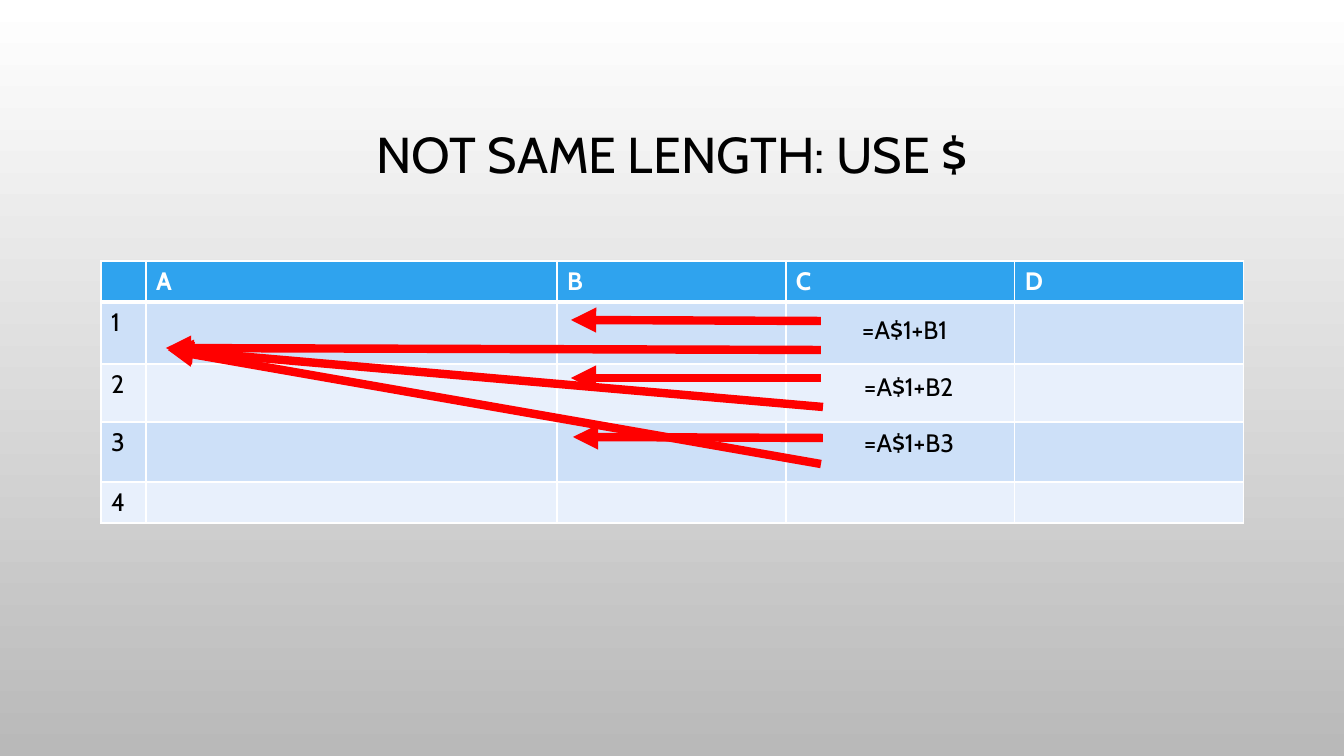
from lxml import etree
from pptx import Presentation
from pptx.dml.color import RGBColor
from pptx.enum.shapes import MSO_CONNECTOR
from pptx.enum.text import MSO_ANCHOR, PP_ALIGN
from pptx.oxml.ns import qn
from pptx.util import Pt

PX = 914400 / 100.8
STRAIGHT = MSO_CONNECTOR.STRAIGHT
MIDDLE, TOP = MSO_ANCHOR.MIDDLE, MSO_ANCHOR.TOP
CENTER, LEFT = PP_ALIGN.CENTER, PP_ALIGN.LEFT
BLACK, WHITE, RED = "000000", "FFFFFF", "FF0000"
HEADER, BAND_DARK, BAND_LIGHT = "2FA3EE", "CDE0F8", "E8F0FC"


def px(*lengths):
    return [round(length * PX) for length in lengths]


def write(frame, text, size=18, color=BLACK, bold=False, align=LEFT, anchor=TOP,
          wrap=True, spacing=None):
    frame.word_wrap = wrap
    frame.vertical_anchor = anchor
    paragraph = frame.paragraphs[0]
    paragraph.alignment = align
    paragraph.line_spacing = spacing
    run = paragraph.add_run()
    run.text = text
    run.font.name = "Cabin"
    run.font.size = Pt(size)
    run.font.bold = bold
    run.font.color.rgb = RGBColor.from_string(color)


presentation = Presentation()
presentation.slide_width, presentation.slide_height = px(1344, 756)
slide = presentation.slides.add_slide(presentation.slide_layouts[6])

# Background: white at the top to grey at the bottom
background = slide.background.fill
background.gradient()
background.gradient_angle = 270
for stop, color in zip(background.gradient_stops, (WHITE, "B9B9B9")):
    stop.color.rgb = RGBColor.from_string(color)

# Title
title = slide.shapes.add_textbox(*px(101, 69, 1142, 176))
write(title.text_frame, "NOT SAME LENGTH: USE $", size=36, align=CENTER,
      anchor=MIDDLE, spacing=0.9)

# Spreadsheet grid
column_widths = [45, 411, 229, 229, 229]
row_heights = [41, 62, 58, 60, 41]
table = slide.shapes.add_table(
    len(row_heights), len(column_widths),
    *px(101, 261, sum(column_widths), sum(row_heights))).table
for column, width in zip(table.columns, px(*column_widths)):
    column.width = width
for row, height in zip(table.rows, px(*row_heights)):
    row.height = height

for row_index in range(len(row_heights)):
    is_header = row_index == 0
    fill = HEADER if is_header else BAND_DARK if row_index % 2 else BAND_LIGHT
    for column_index, letter in enumerate(["", "A", "B", "C", "D"]):
        cell = table.cell(row_index, column_index)
        properties = cell._tc.get_or_add_tcPr()
        for side in "LRTB":
            thick = (is_header and side == "B") or (row_index == 1 and side == "T")
            border = etree.SubElement(properties, qn(f"a:ln{side}"),
                                      w=str(Pt(3 if thick else 1)))
            solid = etree.SubElement(border, qn("a:solidFill"))
            etree.SubElement(solid, qn("a:srgbClr"), val=WHITE)
        cell.fill.solid()
        cell.fill.fore_color.rgb = RGBColor.from_string(fill)
        if is_header and letter:
            write(cell.text_frame, letter, color=WHITE, bold=True)
        elif not is_header and column_index == 0:
            write(cell.text_frame, str(row_index))

# Formulas, each with arrows to the cells it refers to
formulas = [
    ("=A$1+B1", 852, 309, [(821, 321, 571, 320), (821, 350, 166, 348)]),
    ("=A$1+B2", 854, 366, [(821, 378, 571, 378), (823, 407, 168, 350)]),
    ("=A$1+B3", 854, 422, [(823, 438, 573, 437), (821, 464, 168, 350)]),
]
for formula, left, top, arrows in formulas:
    for ends in arrows:
        arrow = slide.shapes.add_connector(STRAIGHT, *px(*ends))
        arrow.line.width = Pt(6)
        arrow.line.color.rgb = RGBColor.from_string(RED)
        etree.SubElement(arrow.line._get_or_add_ln(), qn("a:tailEnd"), type="triangle")
        etree.SubElement(arrow._element.spPr, qn("a:effectLst"))
    label = slide.shapes.add_textbox(*px(left, top, 124, 40))
    write(label.text_frame, formula, wrap=False)

presentation.save("out.pptx")
